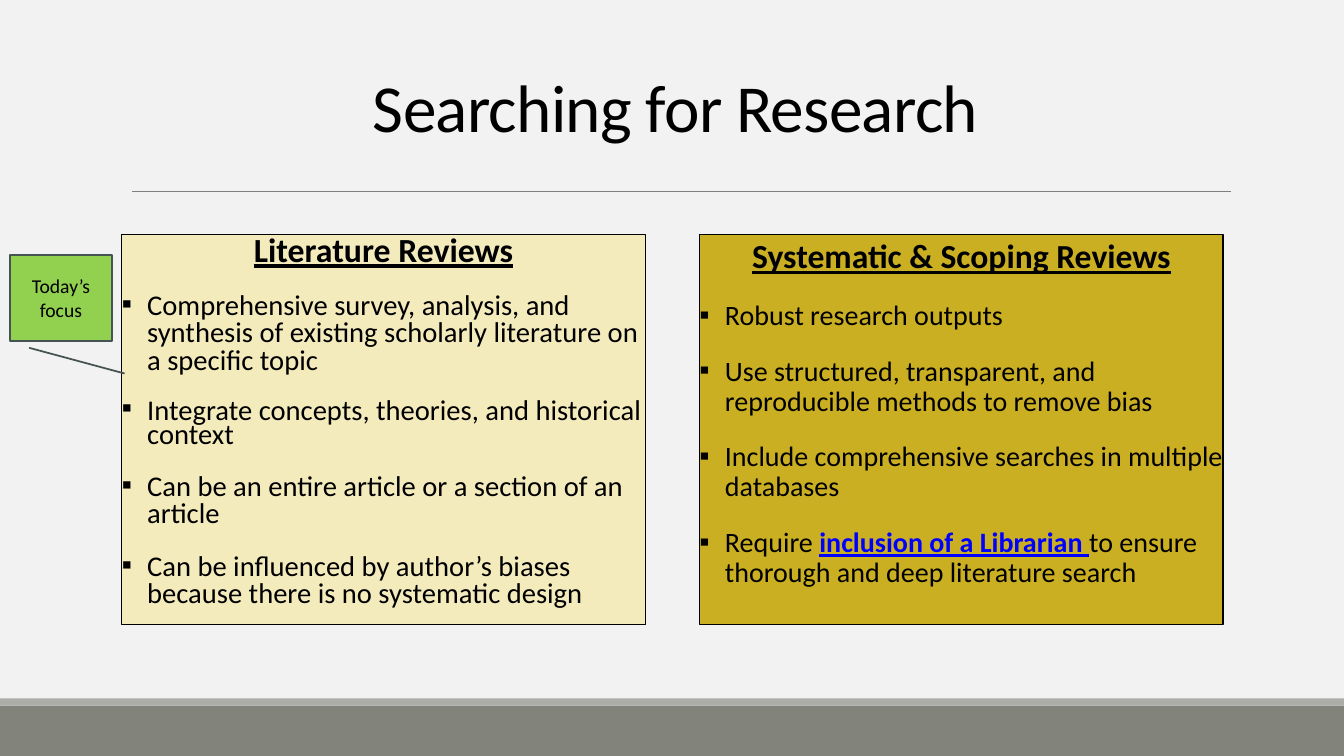
"""Build a slide comparing literature reviews with systematic reviews."""
from lxml import etree
from pptx import Presentation
from pptx.dml.color import RGBColor
from pptx.enum.shapes import MSO_CONNECTOR, MSO_SHAPE
from pptx.enum.text import MSO_ANCHOR, MSO_AUTO_SIZE, PP_ALIGN
from pptx.oxml.ns import qn
from pptx.util import Inches, Pt

LINE = MSO_CONNECTOR.STRAIGHT
RECT, CALL = MSO_SHAPE.RECTANGLE, MSO_SHAPE.LINE_CALLOUT_1
TOP, MID, LOW = MSO_ANCHOR.TOP, MSO_ANCHOR.MIDDLE, MSO_ANCHOR.BOTTOM
LEFT, CENTER = PP_ALIGN.LEFT, PP_ALIGN.CENTER
FIXED = MSO_AUTO_SIZE.NONE

FONT = "Calibri"
COLORS = {
    "back": "F2F2F2", "band": "82847C", "strip": "ACADA8", "rule": "808080",
    "cream": "F4EBBD", "gold": "CBAF22", "green": "92D050", "edge": "455453",
    "ink": "000000", "link": "0000FF",
}
TITLE = "Searching for Research"
FOCUS = "Today’s focus"
BANDS = [("band", 7, 0.5), ("strip", 6.93, 0.07)]
LINK = "inclusion of a Librarian "
PANELS = [
    {"head": "Literature Reviews", "fill": "cream", "sizes": (24.1, 20.4), "gap": 0.7,
     "items": [
         ("Comprehensive survey, analysis, and synthesis of existing "
          "scholarly literature on a specific topic", 0.8),
         ("Integrate concepts, theories, and historical context", 0.7),
         ("Can be an entire article or a section of an article", 0.8),
         ("Can be influenced by author’s biases because there is no "
          "systematic design", 0.8)]},
    {"head": "Systematic & Scoping Reviews", "fill": "gold", "sizes": (24, 20), "gap": 0.9,
     "items": [
         ("Robust research outputs", 0.9),
         ("Use structured, transparent, and reproducible methods to remove bias", 0.9),
         ("Include comprehensive searches in multiple databases", 0.9),
         ("Require " + LINK + "to ensure thorough and deep literature search", 0.9)]},
]


def rgb(name):
    return RGBColor.from_string(COLORS[name])


def place(shape, x, y, w, h):
    shape.left, shape.top = Inches(x), Inches(y)
    shape.width, shape.height = Inches(w), Inches(h)


def paint(shape, fill, edge=None, width=0.75):
    shape.fill.solid()
    shape.fill.fore_color.rgb = rgb(fill)
    if edge:
        shape.line.color.rgb = rgb(edge)
        shape.line.width = Pt(width)
    else:
        shape.line.fill.background()


def block(slide, kind, box, fill, edge=None, width=0.75):
    shape = slide.shapes.add_shape(kind, *map(Inches, box))
    shape.shadow.inherit = False
    paint(shape, fill, edge, width)
    return shape


def frame(shape, anchor, side=0.1):
    body = shape.text_frame
    body.word_wrap, body.auto_size = True, FIXED
    body.vertical_anchor = anchor
    body.margin_left = body.margin_right = Inches(side)
    body.margin_top = body.margin_bottom = Inches(0.05)
    return body


def write(para, text, size=20, align=LEFT, gap=1.0, before=0, bullet=False,
          strong=False, track=0):
    props = para._p.get_or_add_pPr()
    dent = Inches(0.25) if bullet else 0
    props.set("marL", str(dent))
    props.set("indent", str(-dent))
    if bullet:
        etree.SubElement(props, qn("a:buFont")).set("typeface", FONT)
        etree.SubElement(props, qn("a:buChar")).set("char", "▪")
    else:
        etree.SubElement(props, qn("a:buNone"))
    para.alignment, para.line_spacing = align, gap
    para.space_before, para.space_after = Pt(before), Pt(0)
    start, link, rest = text.partition(LINK)
    for part in filter(None, (start, link, rest)):
        run = para.add_run()
        run.text = part
        linked = part == LINK
        font = run.font
        font.name, font.size = FONT, Pt(size)
        font.bold = font.underline = strong or linked
        font.color.rgb = rgb("link" if linked else "ink")
        if track:
            run._r.get_or_add_rPr().set("spc", str(track))


def panel(shape, data, x):
    place(shape, x, 2.33, 5.19, 3.87)
    paint(shape, data["fill"], "ink")
    body = frame(shape, TOP, side=0)
    large, small = data["sizes"]
    write(body.paragraphs[0], data["head"], size=large, align=CENTER,
          gap=data["gap"], strong=True)
    for text, gap in data["items"]:
        write(body.add_paragraph(), text, size=small, gap=gap, before=18, bullet=True)


def main():
    deck = Presentation()
    deck.slide_width, deck.slide_height = Inches(13.33), Inches(7.5)
    slide = deck.slides.add_slide(deck.slide_layouts[3])
    slide.background.fill.solid()
    slide.background.fill.fore_color.rgb = rgb("back")

    for fill, y, h in BANDS:
        block(slide, RECT, (0, y, 13.33, h), fill)
    rule = slide.shapes.add_connector(LINE, *map(Inches, (1.31, 1.9, 12.21, 1.9)))
    rule.line.color.rgb, rule.line.width = rgb("rule"), Pt(0.5)
    etree.SubElement(rule._element.spPr, qn("a:effectLst"))

    title, *bodies = slide.placeholders
    place(title, 1.2, 0.31, 11, 1.19)
    write(frame(title, LOW).paragraphs[0], TITLE, size=48, align=CENTER,
          gap=0.85, track=-50)
    for i, (body, data) in enumerate(zip(bodies, PANELS)):
        panel(body, data, 1.21 + i * 5.73)

    call = block(slide, CALL, (0.18, 2.45, 0.85, 1.01), "green", "edge", 1.25)
    call.rotation = 270
    label = block(slide, RECT, (0.11, 2.67, 0.99, 0.57), "green")
    write(frame(label, MID).paragraphs[0], FOCUS, size=14, align=CENTER)
    deck.save("out.pptx")


if __name__ == "__main__":
    main()
